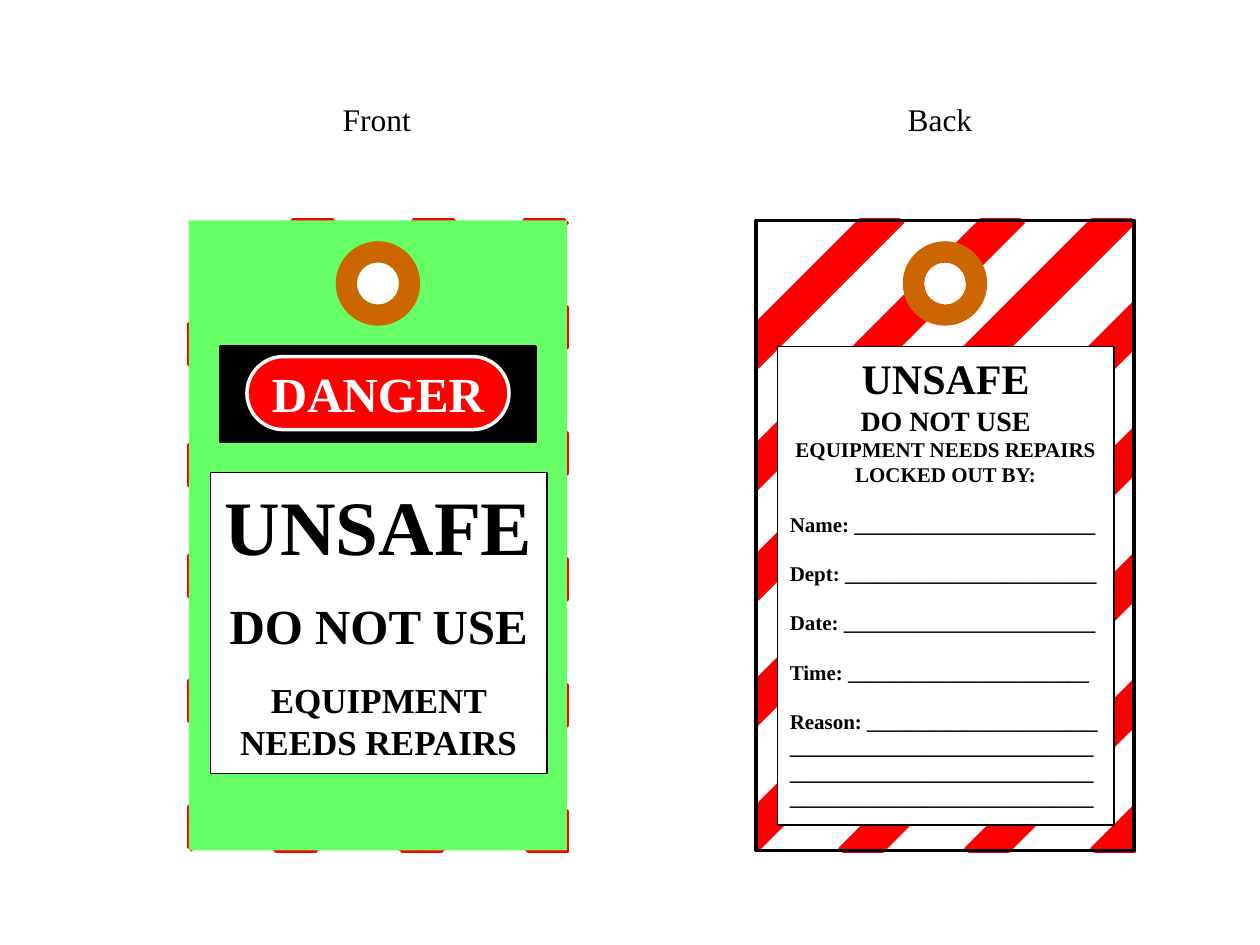
import pptx
import pptx.util
import pptx.dml.color
import pptx.enum.shapes
import pptx.enum.text
import pptx.oxml.ns
import lxml.etree

Inches = pptx.util.Inches
Pt = pptx.util.Pt
SHAPES = pptx.enum.shapes.MSO_SHAPE
ANCHOR = pptx.enum.text.MSO_ANCHOR
ALIGN = pptx.enum.text.PP_ALIGN
FONT = "Times New Roman"
RED, WHITE, BLACK, GREEN, BROWN = "FF0000", "FFFFFF", "000000", "66FF66", "CC6600"
TAG_WIDTH, TAG_HEIGHT, BLEED = 3, 5, 0.08
STRIPE_SUMS = [1, 1.96, 2.84, 3.83, 4.83, 5.83, 6.83, 7.83]
BLANK_LINE = 13.8


def color(value):
    return pptx.dml.color.RGBColor.from_string(value)


def add_block(shapes, kind, left, top, width, height, fill=None, line=None, weight=1):
    block = shapes.add_shape(kind, Inches(left), Inches(top), Inches(width), Inches(height))
    block.shadow.inherit = False
    if fill:
        block.fill.solid()
        block.fill.fore_color.rgb = color(fill)
    else:
        block.fill.background()
    if line:
        block.line.color.rgb = color(line)
        block.line.width = Pt(weight)
    else:
        block.line.fill.background()
    return block


def write_lines(box, lines, ink=BLACK, bold=True, anchor=ANCHOR.TOP, margin=None):
    frame = box.text_frame
    frame.word_wrap = True
    frame.vertical_anchor = anchor
    if margin is not None:
        frame.margin_left = frame.margin_right = Inches(margin)
        frame.margin_top = frame.margin_bottom = Inches(margin)
    for index, (text, size, align, gap) in enumerate(lines):
        para = frame.paragraphs[0] if index == 0 else frame.add_paragraph()
        para.text = text
        para.alignment = align
        para.space_before = Pt(gap)
        for span in para.runs:
            span.font.name = FONT
            span.font.size = Pt(size)
            span.font.bold = bold
            span.font.color.rgb = color(ink)


def add_stripes(shapes, left, top):
    right, bottom = TAG_WIDTH + BLEED, TAG_HEIGHT + BLEED
    for total in STRIPE_SUMS:
        start = max(-BLEED, total - bottom)
        end = min(right, total + BLEED)
        stripe = shapes.add_connector(
            pptx.enum.shapes.MSO_CONNECTOR.STRAIGHT,
            Inches(left + start), Inches(top + total - start),
            Inches(left + end), Inches(top + total - end))
        stripe.line.color.rgb = color(RED)
        stripe.line.width = Pt(20)
        lxml.etree.SubElement(stripe._element.spPr, pptx.oxml.ns.qn("a:effectLst"))
    margin = 0.17
    add_block(shapes, SHAPES.RECTANGLE, left - margin, top - margin,
              TAG_WIDTH + 2 * margin, TAG_HEIGHT + 2 * margin, line=WHITE, weight=22)


def add_eyelet(shapes, left, top):
    middle, center = left + TAG_WIDTH / 2, top + 0.5
    for kind, size, fill in [(SHAPES.DONUT, 0.67, BROWN), (SHAPES.OVAL, 0.33, WHITE)]:
        add_block(shapes, kind, middle - size / 2, center - size / 2, size, size, fill)


def add_front(page, left, top):
    shapes = page.shapes.add_group_shape().shapes
    add_stripes(shapes, left, top)
    add_block(shapes, SHAPES.RECTANGLE, left, top, TAG_WIDTH, TAG_HEIGHT, GREEN)
    add_block(shapes, SHAPES.RECTANGLE, left + 0.25, top + 1, 2.5, 0.75, BLACK, BLACK, 2)
    badge = add_block(shapes, SHAPES.ROUNDED_RECTANGLE, left + 0.46, top + 1.08,
                      2.08, 0.58, RED, WHITE, 2)
    badge.adjustments[0] = 0.5
    write_lines(badge, [("DANGER", 28, ALIGN.CENTER, 0)], WHITE, True, ANCHOR.MIDDLE, 0.05)
    panel = add_block(shapes, SHAPES.RECTANGLE, left + 0.17, top + 2, 2.67, 2.39, WHITE, BLACK)
    write_lines(panel, [
        ("UNSAFE", 44, ALIGN.CENTER, 0),
        ("DO NOT USE", 28, ALIGN.CENTER, BLANK_LINE),
        ("EQUIPMENT NEEDS REPAIRS", 20, ALIGN.CENTER, BLANK_LINE)])
    add_eyelet(shapes, left, top)


def add_back(page, left, top):
    shapes = page.shapes.add_group_shape().shapes
    add_stripes(shapes, left, top)
    add_block(shapes, SHAPES.RECTANGLE, left, top, TAG_WIDTH, TAG_HEIGHT, line=BLACK, weight=2)
    panel = add_block(shapes, SHAPES.RECTANGLE, left + 0.17, top + 1, 2.67, 3.8, WHITE, BLACK)
    headings = [("UNSAFE", 24), ("DO NOT USE", 16),
                ("EQUIPMENT NEEDS REPAIRS", 12), ("LOCKED OUT BY:", 12)]
    fields = [("Name", 23), ("Dept", 24), ("Date", 24), ("Time", 23), ("Reason", 22)]
    lines = [(text, size, ALIGN.CENTER, 0) for text, size in headings]
    lines += [(f"{label}: {'_' * count}", 12, ALIGN.LEFT, BLANK_LINE) for label, count in fields]
    lines.append(("_" * 87, 12, ALIGN.LEFT, 0))
    write_lines(panel, lines)
    add_eyelet(shapes, left, top)


def add_caption(page, text, left, top):
    box = page.shapes.add_textbox(Inches(left), Inches(top), Inches(0.92), Inches(0.4))
    write_lines(box, [(text, 18, ALIGN.CENTER, 0)], BLACK, False, ANCHOR.MIDDLE, 0.05)


def main():
    deck = pptx.Presentation()
    deck.slide_width, deck.slide_height = Inches(10), Inches(7.5)
    page = deck.slides.add_slide(deck.slide_layouts[6])
    add_front(page, 1.5, 1.75)
    add_back(page, 6, 1.75)
    add_caption(page, "Front", 2.53, 0.74)
    add_caption(page, "Back", 7, 0.74)
    deck.save("out.pptx")


if __name__ == "__main__":
    main()
